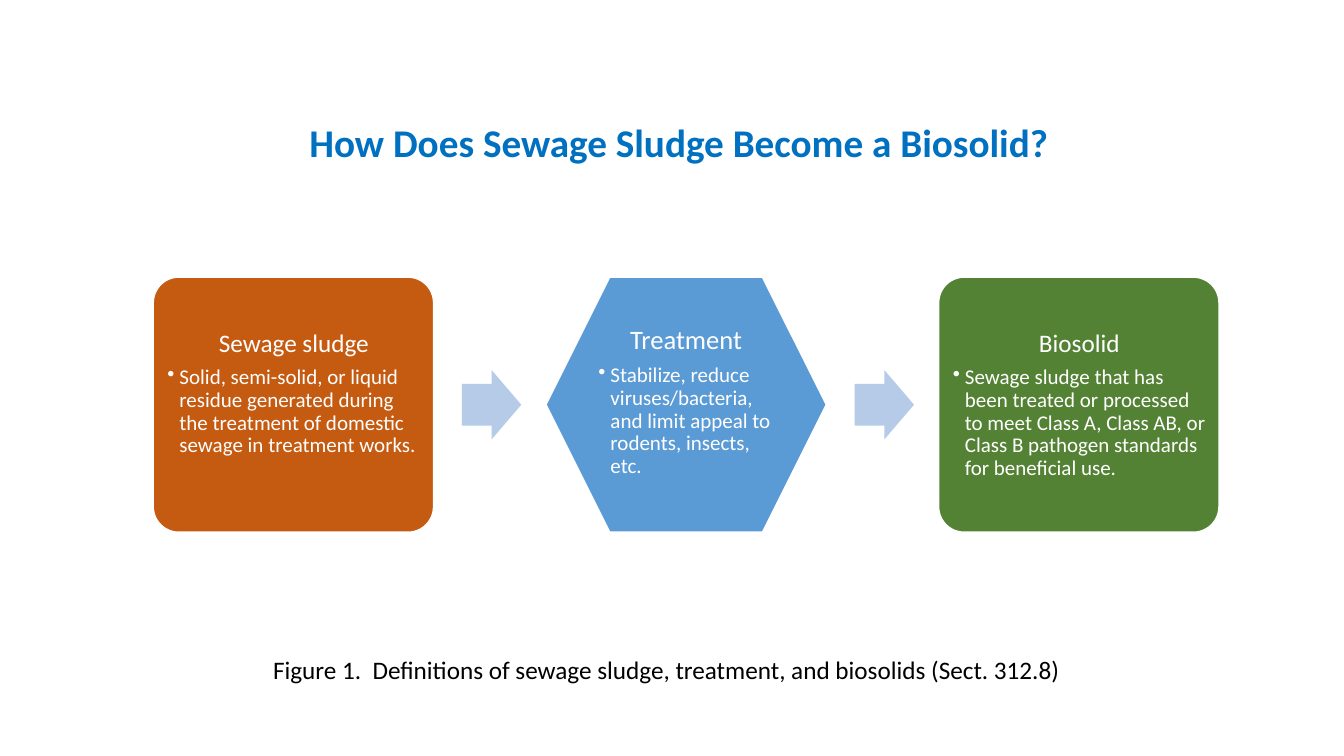
import pptx
import pptx.util
import pptx.dml.color
import pptx.enum.shapes
import pptx.enum.text
import pptx.oxml.ns
import lxml.etree

Inches = pptx.util.Inches
Pt = pptx.util.Pt
Kind = pptx.enum.shapes.MSO_SHAPE
Align = pptx.enum.text.PP_ALIGN

# Content
TITLE = "How Does Sewage Sludge Become a Biosolid?"
CAPTION = "Figure 1.  Definitions of sewage sludge, treatment, and biosolids (Sect. 312.8)"
ROUND = dict(kind=Kind.ROUNDED_RECTANGLE, adj=0.1, size=18,
             text=(0.08, 0.08, 2.63, 2.38), pad=0.06, top=0.45)
HEX = dict(kind=Kind.HEXAGON, adj=0.25, size=19,
           text=(0.44, 0.41, 1.9, 1.72), pad=0.08, top=0.08)
STEPS = [
    ("Sewage sludge", "Solid, semi-solid, or liquid residue generated during "
     "the treatment of domestic sewage in treatment works.", "C55A11", ROUND),
    ("Treatment", "Stabilize, reduce viruses/bacteria, and limit appeal to "
     "rodents, insects, etc.", "5B9BD5", HEX),
    ("Biosolid", "Sewage sludge that has been treated or processed to meet "
     "Class A, Class AB, or Class B pathogen standards for beneficial use.",
     "548235", ROUND),
]

# Layout in inches
LEFT, TOP, WIDE, HIGH = 1.52, 2.75, 2.78, 2.53
PITCH = 3.895
ARROW_GAP, ARROW_W, ARROW_H = 3.06, 0.59, 0.69


def color(hex_text):
    return pptx.dml.color.RGBColor.from_string(hex_text)


def style(para, text, size, ink, align=Align.LEFT, bold=False):
    para.text = text
    para.alignment = align
    font = para.font
    font.name, font.size, font.bold = "Calibri", Pt(size), bold
    font.color.rgb = color(ink)


def add_text(left, top, wide, high):
    box = slide.shapes.add_textbox(*map(Inches, (left, top, wide, high)))
    box.text_frame.word_wrap = True
    return box.text_frame


def add_shape(kind, left, top, wide, high, fill, adjust):
    shape = slide.shapes.add_shape(kind, *map(Inches, (left, top, wide, high)))
    shape.shadow.inherit = False
    shape.fill.solid()
    shape.fill.fore_color.rgb = color(fill)
    for i, value in enumerate(adjust):
        shape.adjustments[i] = value
    return shape


def add_bullet(para):
    props = para._p.get_or_add_pPr()
    props.set("marL", str(Inches(0.12)))
    props.set("indent", str(-Inches(0.12)))
    mark = lxml.etree.SubElement(props, pptx.oxml.ns.qn("a:buChar"))
    mark.set("char", "•")


def add_step(left, head, body, fill, look):
    shape = add_shape(look["kind"], left, TOP, WIDE, HIGH, fill, [look["adj"]])
    shape.line.color.rgb = color("FFFFFF")
    shape.line.width = Pt(1)

    dx, dy, wide, high = look["text"]
    frame = add_text(left + dx, TOP + dy, wide, high)
    frame.margin_left = frame.margin_right = frame.margin_bottom = Inches(look["pad"])
    frame.margin_top = Inches(look["top"])
    first, second = frame.paragraphs[0], frame.add_paragraph()
    style(first, head, look["size"], "FFFFFF", Align.CENTER)
    style(second, body, 15, "FFFFFF")
    second.level = 1
    for para, share in ((first, 0.35), (second, 0.15)):
        para.line_spacing = 0.9
        para.space_after = Pt(round(para.font.size.pt * share, 1))
    add_bullet(second)


deck = pptx.Presentation()
deck.slide_width, deck.slide_height = Inches(13.33), Inches(7.5)
slide = deck.slides.add_slide(deck.slide_layouts[6])

# Title
style(add_text(1.96, 1.12, 9.54, 0.57).paragraphs[0], TITLE, 28, "0070C0",
      Align.CENTER, True)

# Steps, with an arrow after each but the last
for i, step in enumerate(STEPS):
    left = LEFT + i * PITCH
    add_step(left, *step)
    if i < len(STEPS) - 1:
        arrow = add_shape(Kind.RIGHT_ARROW, left + ARROW_GAP,
                          TOP + (HIGH - ARROW_H) / 2, ARROW_W, ARROW_H,
                          "B5CBE7", [0.6, 0.5])
        arrow.line.fill.background()

# Caption
style(add_text(2.61, 6.44, 8.39, 0.4).paragraphs[0], CAPTION, 18, "000000")

deck.save("out.pptx")
